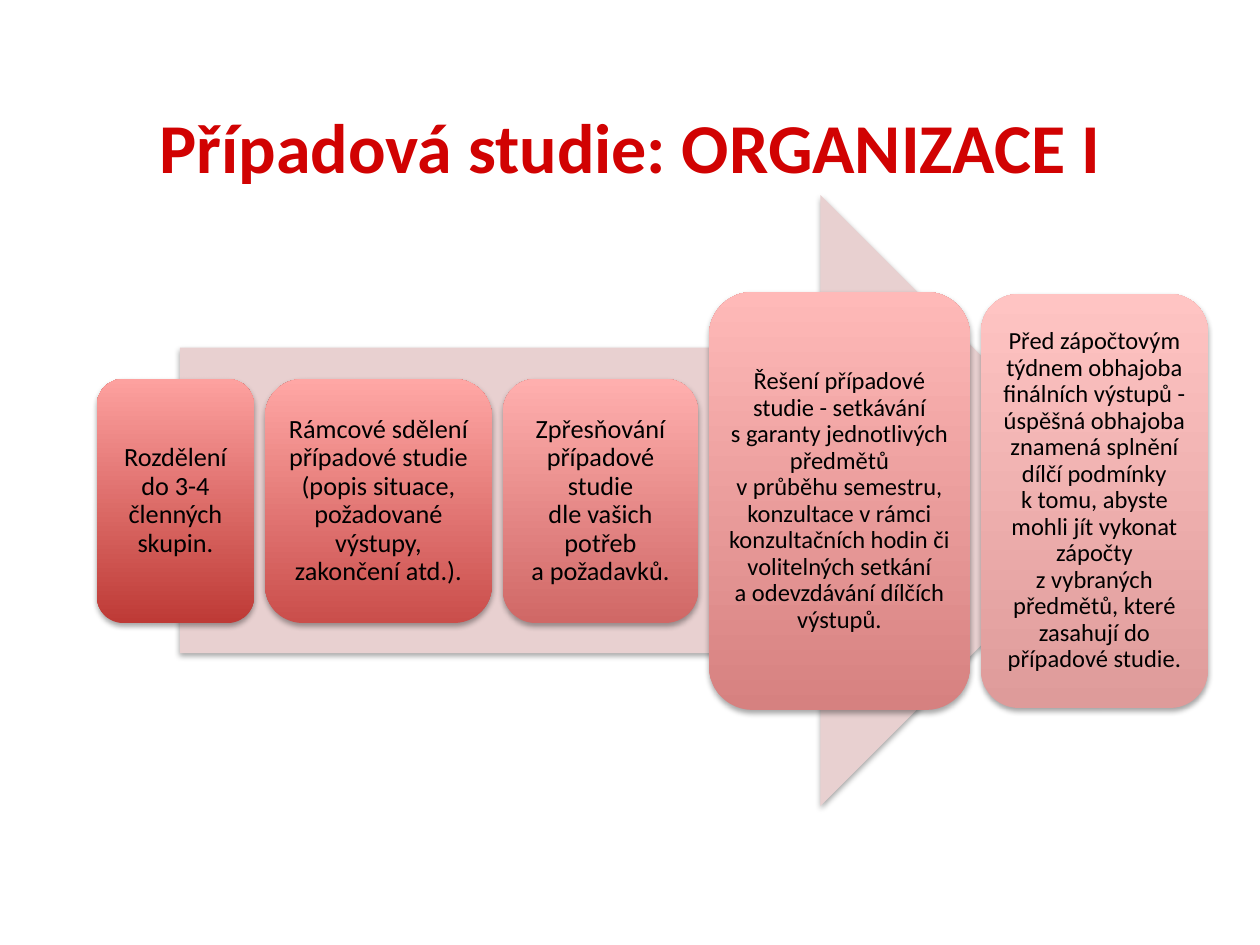
from copy import deepcopy
from dataclasses import dataclass

from lxml import etree
from pptx import Presentation
from pptx import util as u
from pptx.dml.color import RGBColor
from pptx.enum import shapes, text
from pptx.oxml import ns

EMU_PER_PX = 914400 / 126
SLIDE_WIDTH, SLIDE_HEIGHT = 1260, 945
ROW_LEFT, ROW_MIDDLE, STEP_GAP = 97, 501, 11

# width, height, text size, bottom colour, top colour, wording
STEPS = [
    (157, 244, 15, "BE3A36", "FDA19F", "Rozdělení do 3-4 členných skupin."),
    (227, 244, 15, "CA4E4B", "FFA7A5",
     "Rámcové sdělení případové studie (popis situace, požadované výstupy, "
     "zakončení atd.)."),
    (195, 244, 15, "D06866", "FFAFAE",
     "Zpřesňování případové studie\ndle vašich potřeb\na požadavků."),
    (261, 418, 14, "D68180", "FFB9B8",
     "Řešení případové studie - setkávání\ns garanty jednotlivých předmětů\n"
     "v průběhu semestru, konzultace v rámci konzultačních hodin "
     "či volitelných setkání\na odevzdávání dílčích výstupů."),
    (227, 414, 14, "DE9B9A", "FFC4C3",
     "Před zápočtovým týdnem obhajoba finálních výstupů - úspěšná obhajoba "
     "znamená splnění dílčí podmínky\nk tomu, abyste mohli jít vykonat "
     "zápočty\nz vybraných předmětů, které zasahují do případové studie."),
]


@dataclass
class Theme:
    font: str = "Calibri"
    title_size: int = 40
    title: str = "D10202"
    body: str = "000000"
    arrow: str = "E8D0D0"
    shadow: str = "000000"


def px(length):
    return u.Emu(round(length * EMU_PER_PX))


def set_all(target, values):
    for name, value in values.items():
        setattr(target, name, value)


class SlideBuilder:
    def __init__(self, slide, theme):
        self.slide = slide
        self.theme = theme

    def add_text(self, shape, wording, size, color, bold=False, inset=0, spacing=1.0):
        frame = shape.text_frame
        set_all(frame, {
            "word_wrap": True,
            "vertical_anchor": text.MSO_ANCHOR.MIDDLE,
            **{f"margin_{side}": px(inset) for side in ("left", "top", "right", "bottom")},
        })
        paragraph = frame.paragraphs[0]
        paragraph.text = wording
        set_all(paragraph, {"alignment": text.PP_ALIGN.CENTER, "line_spacing": spacing})
        for run in paragraph.runs:
            set_all(run.font, {"name": self.theme.font, "size": u.Pt(size), "bold": bold})
            run.font.color.rgb = RGBColor.from_string(color)
        # Line breaks need the run's size, or they stretch their lines
        for line_break in paragraph._p.findall(ns.qn("a:br")):
            line_break.append(deepcopy(paragraph.runs[0]._r.rPr))

    def title(self, wording, left, top, width, height):
        box = self.slide.shapes.add_textbox(*map(px, (left, top, width, height)))
        self.add_text(box, wording, self.theme.title_size, self.theme.title, bold=True)

    def shadowed_shape(self, preset, left, top, width, height):
        shape = self.slide.shapes.add_shape(preset, *map(px, (left, top, width, height)))
        shape.line.fill.background()
        shape.shadow.inherit = False
        effects = shape._element.spPr.find(ns.qn("a:effectLst"))
        shadow = etree.SubElement(effects, ns.qn("a:outerShdw"), blurRad="40000",
                                  dist="23000", dir="5400000", rotWithShape="0")
        color = etree.SubElement(shadow, ns.qn("a:srgbClr"), val=self.theme.shadow)
        etree.SubElement(color, ns.qn("a:alpha"), val="35000")
        return shape

    def arrow(self, left, top, width, height):
        shape = self.shadowed_shape(shapes.MSO_SHAPE.RIGHT_ARROW, left, top, width, height)
        shape.fill.solid()
        shape.fill.fore_color.rgb = RGBColor.from_string(self.theme.arrow)

    def step(self, left, top, width, height, size, bottom_color, top_color, wording):
        shape = self.shadowed_shape(shapes.MSO_SHAPE.ROUNDED_RECTANGLE,
                                    left, top, width, height)
        shape.fill.gradient()
        shape.fill.gradient_angle = 90
        for stop, position, color in zip(shape.fill.gradient_stops, (0, 1),
                                         (bottom_color, top_color)):
            stop.position = position
            stop.color.rgb = RGBColor.from_string(color)
        self.add_text(shape, wording, size, self.theme.body, inset=size // 2, spacing=0.9)


def main():
    presentation = Presentation()
    set_all(presentation, {"slide_width": px(SLIDE_WIDTH), "slide_height": px(SLIDE_HEIGHT)})
    slide = presentation.slides.add_slide(presentation.slide_layouts[6])
    builder = SlideBuilder(slide, Theme())

    builder.title("Případová studie: ORGANIZACE I", 63, 96, 1134, 100)
    builder.arrow(180, 195, 946, 611)
    left = ROW_LEFT
    for width, height, *content in STEPS:
        builder.step(left, ROW_MIDDLE - height // 2, width, height, *content)
        left += width + STEP_GAP

    presentation.save("out.pptx")


if __name__ == "__main__":
    main()
